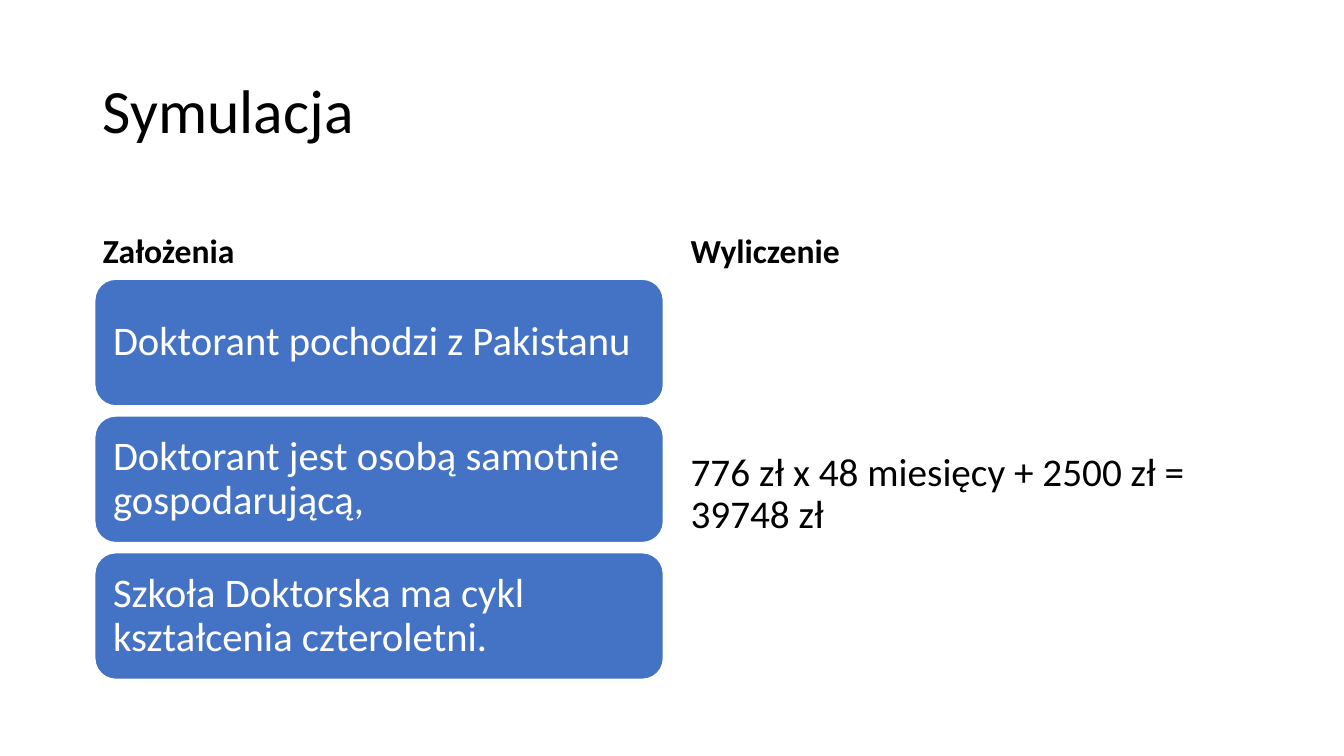
from lxml.etree import SubElement
from pptx import Presentation
from pptx.dml.color import RGBColor
from pptx.enum.shapes import MSO_SHAPE
from pptx.enum.text import MSO_ANCHOR, MSO_AUTO_SIZE, PP_ALIGN
from pptx.oxml.ns import qn
from pptx.util import Inches, Pt

BLACK, WHITE, BLUE = "000000", "FFFFFF", "4472C4"
FACTS = [
    "Doktorant pochodzi z Pakistanu",
    "Doktorant jest osobą samotnie gospodarującą,",
    "Szkoła Doktorska ma cykl kształcenia czteroletni.",
]


def color(code):
    return RGBColor.from_string(code)


def apply(target, style):
    for name, value in style.items():
        setattr(target, name, value)


def place(shape, box):
    names = ("left", "top", "width", "height")
    apply(shape, dict(zip(names, map(Inches, box))))


def write(shape, text, size, tone, anchor, bold=False, **margins):
    frame = shape.text_frame
    frame.text = text
    apply(frame, {"word_wrap": True, "auto_size": MSO_AUTO_SIZE.NONE,
                  "vertical_anchor": anchor, **margins})
    para = frame.paragraphs[0]
    apply(para, {"alignment": PP_ALIGN.LEFT, "line_spacing": 0.9,
                 "space_before": Pt(0)})
    props = para._p.get_or_add_pPr()
    props.set("marL", "0")
    props.set("indent", "0")
    SubElement(props, qn("a:buNone"))
    apply(para.runs[0].font, {"name": "Calibri", "size": Pt(size), "bold": bold})
    para.runs[0].font.color.rgb = color(tone)


def heading(holder, box, text):
    place(holder, box)
    write(holder, text, 44, BLACK, MSO_ANCHOR.MIDDLE)


def label(holder, box, text):
    place(holder, box)
    write(holder, text, 24, BLACK, MSO_ANCHOR.BOTTOM, bold=True)


def cards(slide, box, facts, gap=0.1):
    left, top, width, height = box
    tall = (height - gap * (len(facts) - 1)) / len(facts)
    pad = dict.fromkeys(
        ("margin_left", "margin_top", "margin_right", "margin_bottom"), Inches(0.12))
    for row, fact in enumerate(facts):
        spot = (left, top + row * (tall + gap), width, tall)
        card = slide.shapes.add_shape(MSO_SHAPE.ROUNDED_RECTANGLE, *map(Inches, spot))
        card.shadow.inherit = False
        card.fill.solid()
        card.fill.fore_color.rgb = color(BLUE)
        card.line.color.rgb = color(WHITE)
        card.line.width = Pt(1)
        write(card, fact, 29, WHITE, MSO_ANCHOR.MIDDLE, **pad)


def result(holder, box, text):
    place(holder, box)
    write(holder, text, 28, BLACK, MSO_ANCHOR.TOP, margin_top=Inches(1.75))


def main():
    deck = Presentation()
    apply(deck, {"slide_width": Inches(13.33), "slide_height": Inches(7.5)})
    slide = deck.slides.add_slide(deck.slide_layouts[4])
    title, left, spare, right, body = slide.placeholders
    spare.element.getparent().remove(spare.element)
    heading(title, (0.92, 0.4, 11.5, 1.45), "Symulacja")
    label(left, (0.92, 1.84, 5.64, 0.9), "Założenia")
    cards(slide, (0.94, 2.77, 5.64, 3.97), FACTS)
    label(right, (6.75, 1.84, 5.67, 0.9), "Wyliczenie")
    result(body, (6.75, 2.74, 5.67, 4.03), "776 zł x 48 miesięcy + 2500 zł = 39748 zł")
    deck.save("out.pptx")


if __name__ == "__main__":
    main()
